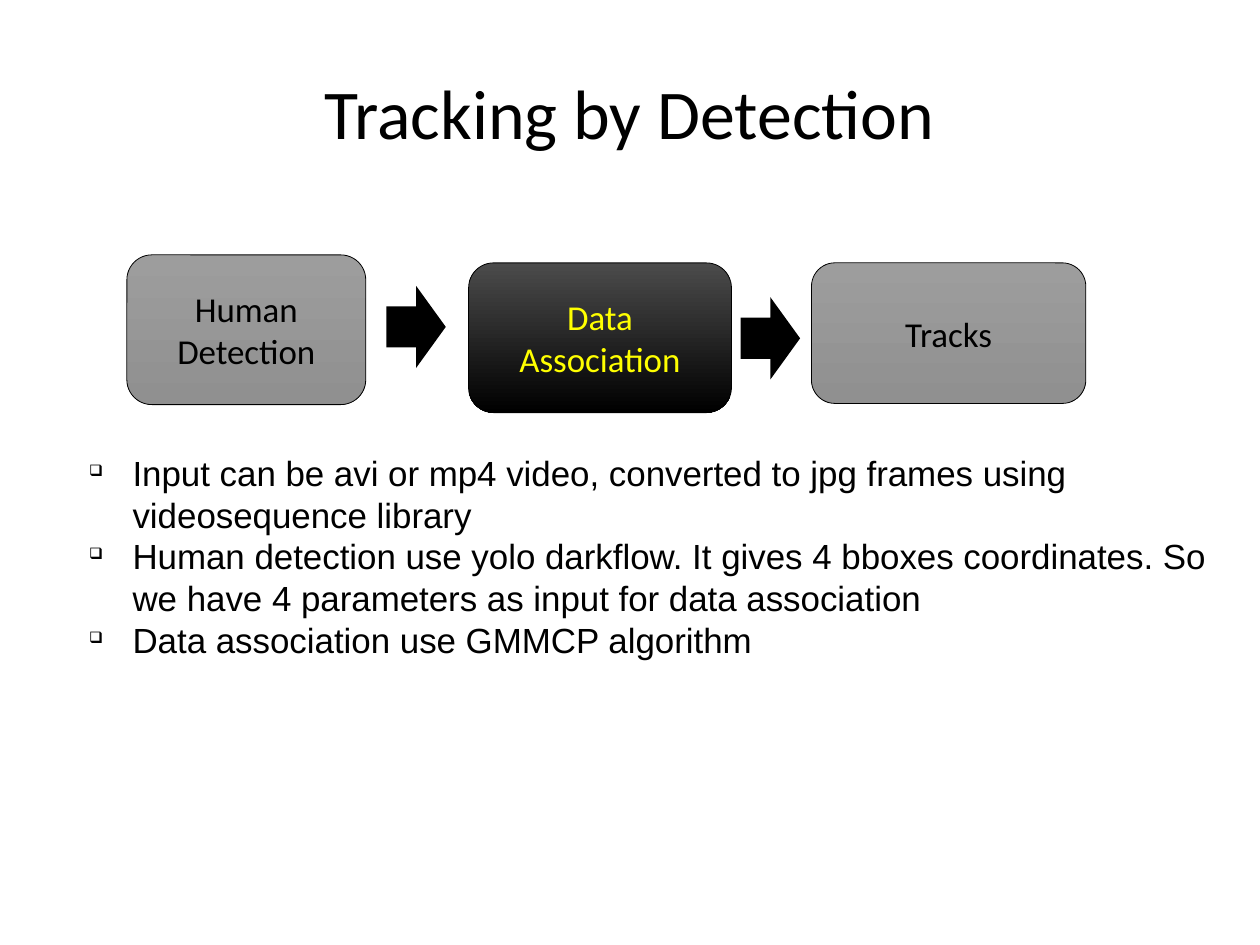
import dataclasses

import pptx
import pptx.dml.color
import pptx.enum.shapes
import pptx.enum.text
import pptx.oxml
import pptx.oxml.ns
import pptx.util

Inches = pptx.util.Inches
Pt = pptx.util.Pt
ShapeKind = pptx.enum.shapes.MSO_SHAPE
Align = pptx.enum.text.PP_ALIGN

CM_PER_INCH = 2.54
COLOURS = {
    "black": "000000",
    "yellow": "FFFF00",
    "grey_top": "9D9D9D",
    "grey_bottom": "909090",
    "charcoal": "4B4B4B",
}


@dataclasses.dataclass
class Stage:
    label: str
    left: float
    top: float
    width: float
    height: float
    fill_top: str = "grey_top"
    fill_bottom: str = "grey_bottom"
    ink: str = "black"


STAGES = [
    Stage("Human Detection", 1.11, 2.23, 2.09, 1.31),
    Stage("Data Association", 4.1, 2.3, 2.3, 1.31, "charcoal", "black", "yellow"),
    Stage("Tracks", 7.1, 2.3, 2.4, 1.23),
]
ARROW_CORNERS = [(3.38, 2.5), (6.48, 2.6)]
NOTES = [
    "Input can be avi or mp4 video, converted to jpg frames using videosequence library",
    "Human detection use yolo darkflow. It gives 4 bboxes coordinates. "
    "So we have 4 parameters as input for data association",
    "Data association use GMMCP algorithm",
]


def colour(name: str) -> pptx.dml.color.RGBColor:
    return pptx.dml.color.RGBColor.from_string(COLOURS[name])


def format_runs(para, size: float, font: str, ink: str = "black") -> None:
    for span in para.runs:
        span.font.size = Pt(size)
        span.font.name = font
        span.font.color.rgb = colour(ink)


def prepare_frame(frame, side: float = 0, edge: float = 0) -> None:
    frame.word_wrap = True
    frame.auto_size = pptx.enum.text.MSO_AUTO_SIZE.NONE
    frame.vertical_anchor = pptx.enum.text.MSO_ANCHOR.MIDDLE
    frame.margin_left = frame.margin_right = Inches(side)
    frame.margin_top = frame.margin_bottom = Inches(edge)


def add_title(page, text: str) -> None:
    title = page.shapes.title
    title.left, title.top = Inches(0.55), Inches(0.33)
    title.width, title.height = Inches(9.92), Inches(1.38)
    prepare_frame(title.text_frame)
    title.text_frame.text = text
    para = title.text_frame.paragraphs[0]
    para.alignment = Align.CENTER
    para.line_spacing = 0.9
    format_runs(para, 44, "Calibri")


def add_stage(page, stage: Stage) -> None:
    box = page.shapes.add_shape(
        ShapeKind.ROUNDED_RECTANGLE,
        Inches(stage.left), Inches(stage.top),
        Inches(stage.width), Inches(stage.height),
    )
    box.shadow.inherit = False
    box.fill.gradient()
    box.fill.gradient_angle = 270
    for stop, name in zip(box.fill.gradient_stops, (stage.fill_top, stage.fill_bottom)):
        stop.color.rgb = colour(name)
    box.line.color.rgb = colour("black")
    box.line.width = Pt(0.5)
    prepare_frame(box.text_frame, 0.1, 0.05)
    box.text_frame.text = stage.label
    para = box.text_frame.paragraphs[0]
    para.alignment = Align.CENTER
    format_runs(para, 22, "Calibri", stage.ink)


def add_arrow(page, left: float, top: float) -> None:
    arrow = page.shapes.add_shape(
        ShapeKind.RIGHT_ARROW, Inches(left), Inches(top), Inches(0.52), Inches(0.72)
    )
    arrow.shadow.inherit = False
    arrow.fill.solid()
    arrow.fill.fore_color.rgb = colour("black")
    arrow.line.fill.background()


def add_bullet(para) -> None:
    properties = para._p.get_or_add_pPr()
    properties.set("marL", str(Inches(0.38)))
    properties.set("indent", str(-Inches(0.38)))
    namespace = pptx.oxml.ns.nsdecls("a")
    for tag in ('buSzPct val="45000"', 'buChar char="❑"'):
        properties.append(pptx.oxml.parse_xml(f"<a:{tag} {namespace}/>"))


def add_notes(page, notes: list[str]) -> None:
    box = page.shapes.add_textbox(Inches(0.78), Inches(3.1), Inches(9.92), Inches(3.83))
    frame = box.text_frame
    prepare_frame(frame)
    frame.margin_bottom = Inches(0.3)
    frame.text = "\n".join(notes)
    for para in frame.paragraphs:
        para.line_spacing = Pt(26.3)
        add_bullet(para)
        format_runs(para, 22, "Arial")


def main() -> None:
    deck = pptx.Presentation()
    deck.slide_width = Inches(28 / CM_PER_INCH)
    deck.slide_height = Inches(21 / CM_PER_INCH)
    page = deck.slides.add_slide(deck.slide_layouts[5])
    add_title(page, "Tracking by Detection")
    for stage in STAGES:
        add_stage(page, stage)
    for left, top in ARROW_CORNERS:
        add_arrow(page, left, top)
    add_notes(page, NOTES)
    deck.save("out.pptx")


if __name__ == "__main__":
    main()
